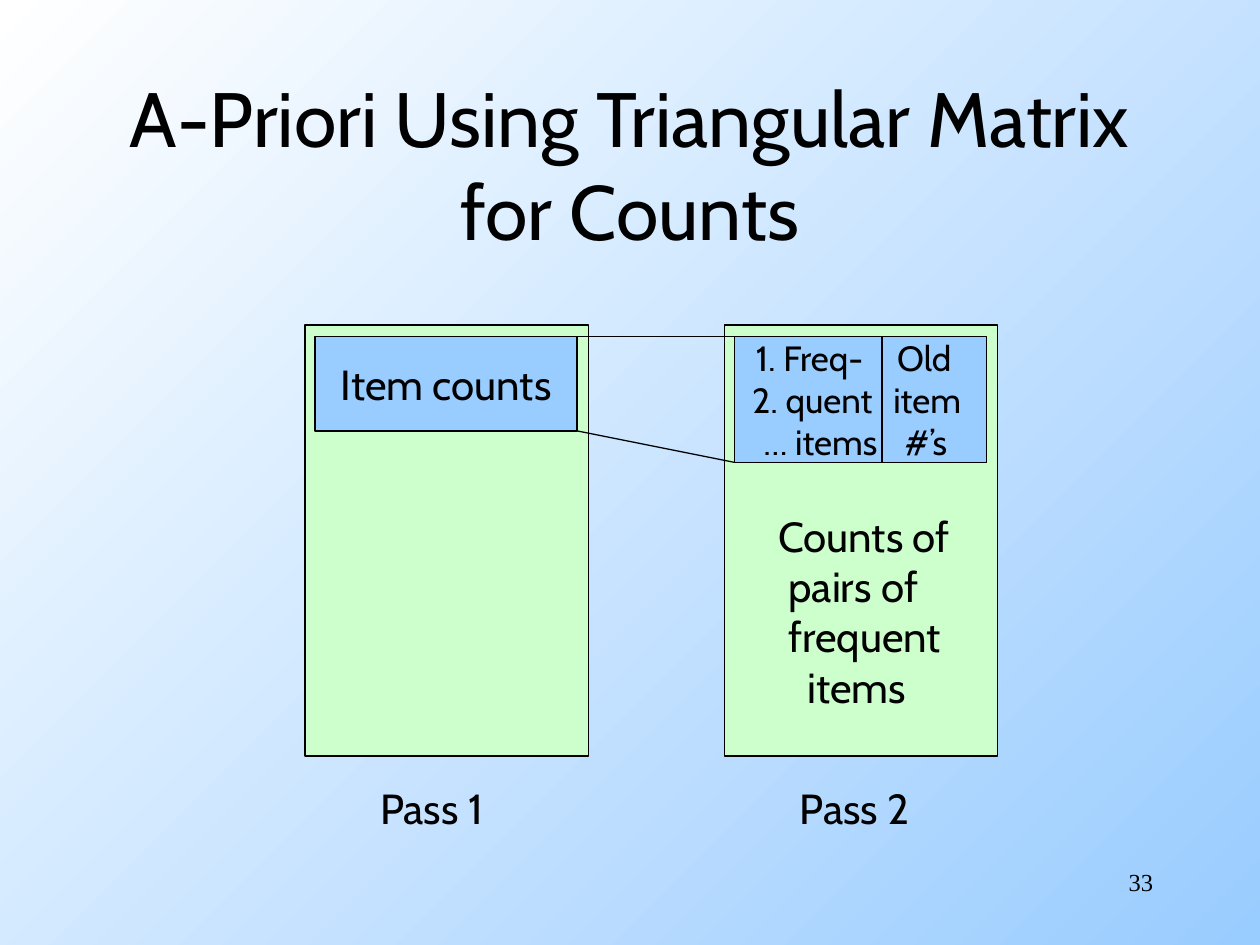
"""Build the A-Priori triangular matrix slide."""
from lxml import etree
from pptx import Presentation
from pptx.dml.color import RGBColor
from pptx.enum.shapes import MSO_CONNECTOR, MSO_SHAPE
from pptx.enum.text import MSO_ANCHOR, PP_ALIGN
from pptx.oxml.ns import qn
from pptx.util import Inches, Pt


def rgb(value):
    return RGBColor.from_string(value)


def write(sp, text, size, align=PP_ALIGN.LEFT, anchor=MSO_ANCHOR.TOP, font="Cabin"):
    tf = sp.text_frame
    tf.text = text
    tf.word_wrap = True
    tf.vertical_anchor = anchor
    for p in tf.paragraphs:
        p.alignment = align
        for r in p.runs:
            r.font.size = Pt(size)
            r.font.name = font
            r.font.color.rgb = rgb("000000")
    return tf


prs = Presentation()
prs.slide_width, prs.slide_height = Inches(10), Inches(7.5)
s = prs.slides.add_slide(prs.slide_layouts[6])

fill = s.background.fill
fill.gradient()
fill.gradient_angle = 315
for stop, position, color in zip(fill.gradient_stops, (0, 1), ("FFFFFF", "99CCFF")):
    stop.position = position
    stop.color.rgb = rgb(color)

boxes = []
for x, y, w, h, color in (
    (2.42, 2.58, 2.25, 3.42, "CCFFCC"),
    (5.75, 2.58, 2.17, 3.42, "CCFFCC"),
    (2.5, 2.67, 2.08, 0.75, "99CCFF"),
    (5.83, 2.67, 2, 1, "99CCFF"),
):
    sp = s.shapes.add_shape(MSO_SHAPE.RECTANGLE, Inches(x), Inches(y), Inches(w), Inches(h))
    sp.shadow.inherit = False
    sp.fill.solid()
    sp.fill.fore_color.rgb = rgb(color)
    sp.line.color.rgb = rgb("000000")
    sp.line.width = Pt(0.75)
    boxes.append(sp)
pass1, pass2, item_counts, frequent_items = boxes

write(item_counts, "Item counts", 24, PP_ALIGN.CENTER, MSO_ANCHOR.MIDDLE)

tf = write(frequent_items, "1. Freq-\tOld\n2. quent\titem\n… items\t#’s", 20,
           anchor=MSO_ANCHOR.MIDDLE)
tf.margin_left, tf.margin_right = Inches(0.14), 0
for p, indent in zip(tf.paragraphs, (0.03, 0, 0.09)):
    pPr = p._p.get_or_add_pPr()
    pPr.set("marL", str(Inches(indent)))
    tabs = etree.SubElement(pPr, qn("a:tabLst"))
    etree.SubElement(tabs, qn("a:tab"), pos=str(Inches(1.12)), algn="l")

for x1, y1, x2, y2 in (
    (4.58, 2.67, 5.83, 2.67),
    (4.58, 3.42, 5.83, 3.67),
    (7, 2.67, 7, 3.67),
):
    line = s.shapes.add_connector(MSO_CONNECTOR.STRAIGHT, Inches(x1), Inches(y1),
                                  Inches(x2), Inches(y2))
    line.line.color.rgb = rgb("000000")
    line.line.width = Pt(0.75)
    etree.SubElement(line._element.spPr, qn("a:effectLst"))

for text, x, y, w, h, size, align, anchor, font in (
    ("A-Priori Using Triangular Matrix for Counts", 0.75, 0.67, 8.5, 1.25, 44,
     PP_ALIGN.CENTER, MSO_ANCHOR.MIDDLE, "Cabin"),
    ("Pass 1", 2.92, 6.16, 1.15, 0.5, 24, PP_ALIGN.LEFT, MSO_ANCHOR.TOP, "Cabin"),
    ("Pass 2", 6.25, 6.16, 1.15, 0.5, 24, PP_ALIGN.LEFT, MSO_ANCHOR.TOP, "Cabin"),
    ("33", 7.17, 6.83, 2.08, 0.5, 14, PP_ALIGN.RIGHT, MSO_ANCHOR.TOP, "Times New Roman"),
):
    sp = s.shapes.add_textbox(Inches(x), Inches(y), Inches(w), Inches(h))
    write(sp, text, size, align, anchor, font)

sp = s.shapes.add_textbox(Inches(6.08), Inches(4), Inches(1.6), Inches(1.7))
tf = write(sp, "Counts of\npairs of\nfrequent\nitems", 24)
for p, indent in zip(tf.paragraphs, (0, 0.08, 0.08, 0.23)):
    p._p.get_or_add_pPr().set("marL", str(Inches(indent)))

prs.save("out.pptx")
